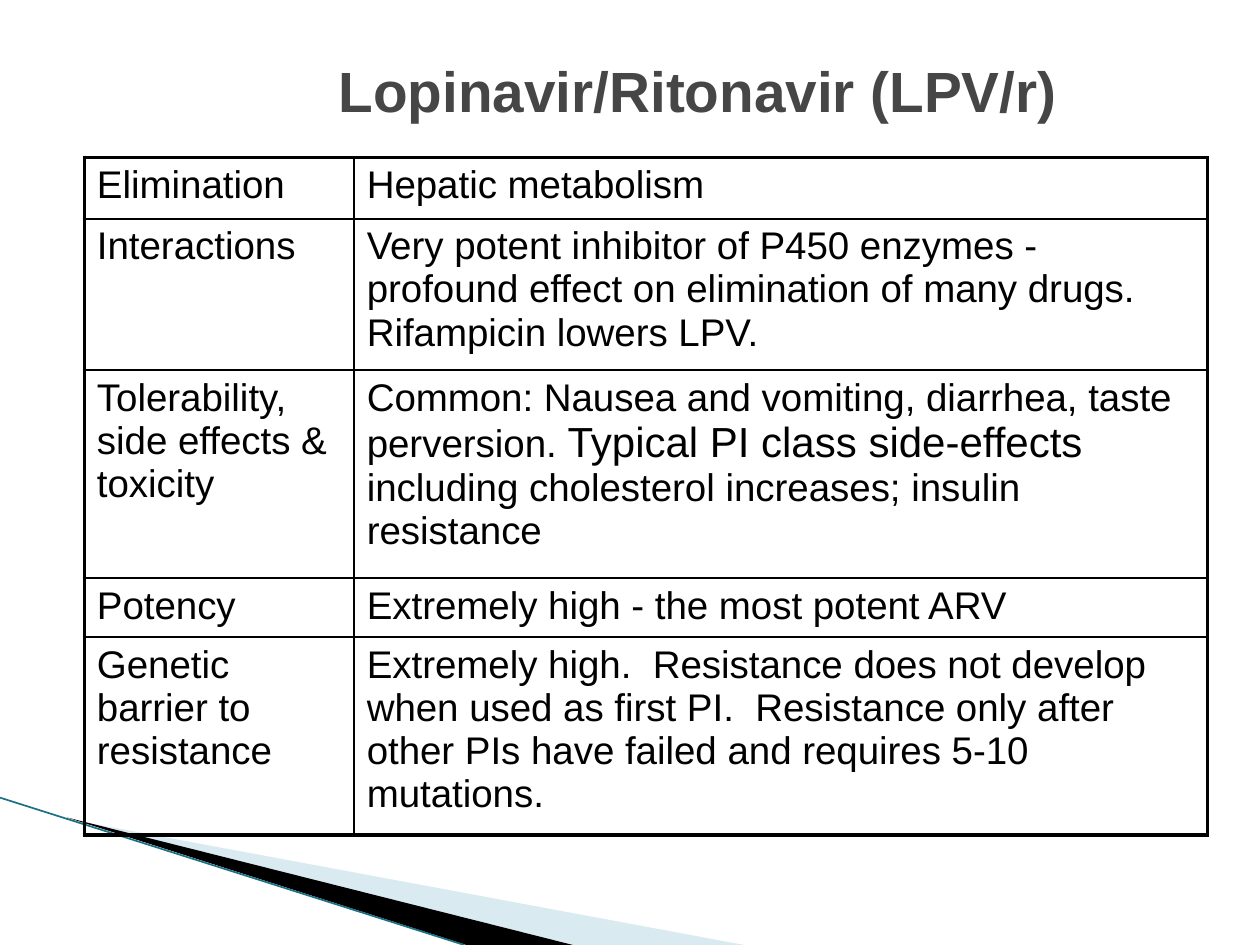
from dataclasses import dataclass

import lxml.etree
import pptx
import pptx.dml.color
import pptx.enum.shapes
import pptx.enum.text
import pptx.oxml.ns
import pptx.util
from pptx.util import Cm


@dataclass(frozen=True)
class Theme:
    font: str = "Arial"
    title: str = "464646"
    ink: str = "000000"
    pale_wedge: str = "A0CBDC"
    edge: str = "1A7085"
    title_size: float = 32.4
    body_size: float = 22
    large_size: float = 24
    inner_line: float = 1
    outer_line: float = 2.25
    edge_line: float = 0.95


theme = Theme()
qn = pptx.oxml.ns.qn


def rgb(value):
    return pptx.dml.color.RGBColor.from_string(value)


def set_border(cell, side, width):
    """Draw one side (L, R, T or B) of a cell, width in points."""
    line = lxml.etree.SubElement(cell._tc.get_or_add_tcPr(), qn(f"a:ln{side}"),
                                 w=str(pptx.util.Pt(width)))
    fill = lxml.etree.SubElement(line, qn("a:solidFill"))
    lxml.etree.SubElement(fill, qn("a:srgbClr"), val=theme.ink)


deck = pptx.Presentation()
deck.slide_width, deck.slide_height = Cm(25.4), Cm(19.05)
slide = deck.slides.add_slide(deck.slide_layouts[5])

# Title
title = slide.shapes.title
title.left, title.top, title.width, title.height = Cm(2.74), Cm(1.27), Cm(22.66), Cm(1.07)
title.text_frame.text = "Lopinavir/Ritonavir (LPV/r)"
title.text_frame.vertical_anchor = pptx.enum.text.MSO_ANCHOR.MIDDLE
heading = title.text_frame.paragraphs[0]
heading.alignment = pptx.enum.text.PP_ALIGN.CENTER
heading_font = heading.runs[0].font
heading_font.name = theme.font
heading_font.size = pptx.util.Pt(theme.title_size)
heading_font.bold = True
heading_font.color.rgb = rgb(theme.title)

# Corner wedges: outline in cm, colour, opacity in percent
wedges = [
    ([(1.4, 16.52), (15, 19.05), (11.58, 19.05)], theme.pale_wedge, 40),
    ([(1.35, 16.48), (11.55, 19.05), (9.4, 19.05)], theme.ink, 100),
]
for outline, color, opacity in wedges:
    points = [(Cm(x), Cm(y)) for x, y in outline]
    builder = slide.shapes.build_freeform(*points[0])
    builder.add_line_segments(points[1:], close=True)
    wedge = builder.convert_to_shape()
    wedge.shadow.inherit = False
    wedge.line.fill.background()
    wedge.fill.solid()
    wedge.fill.fore_color.rgb = rgb(color)
    if opacity < 100:
        tint = wedge._element.spPr.find(".//" + qn("a:srgbClr"))
        lxml.etree.SubElement(tint, qn("a:alpha"), val=str(opacity * 1000))

edge = slide.shapes.add_connector(pptx.enum.shapes.MSO_CONNECTOR.STRAIGHT,
                                  Cm(0), Cm(16.08), Cm(9.36), Cm(19.05))
edge.line.color.rgb = rgb(theme.edge)
edge.line.width = pptx.util.Pt(theme.edge_line)
lxml.etree.SubElement(edge._element.spPr, qn("a:effectLst"))

# Drug profile: row height in cm, property, runs of the description
normal, large = theme.body_size, theme.large_size
profile = [
    (1.24, "Elimination", [("Hepatic metabolism", normal)]),
    (3.05, "Interactions", [
        ("Very potent inhibitor of P450 enzymes - profound effect on elimination "
         "of many drugs. Rifampicin lowers LPV.", normal)]),
    (4.19, "Tolerability, side effects & toxicity", [
        ("Common: Nausea and vomiting, diarrhea, taste perversion. ", normal),
        ("Typical PI class side-effects", large),
        (" including cholesterol increases; insulin resistance", normal)]),
    (1.19, "Potency", [("Extremely high - the most potent ARV", normal)]),
    (3.99, "Genetic barrier to resistance", [
        ("Extremely high.  Resistance does not develop when used as first PI.  "
         "Resistance only after other PIs have failed and requires 5-10 mutations.",
         normal)]),
]
column_widths = [5.44, 17.2]
last_row, last_column = len(profile) - 1, len(column_widths) - 1
table = slide.shapes.add_table(
    len(profile), len(column_widths), Cm(1.7), Cm(3.17),
    Cm(sum(column_widths)), Cm(sum(height for height, _, _ in profile))).table
table.first_row = table.horz_banding = False
for column, width in zip(table.columns, column_widths):
    column.width = Cm(width)

for r, (height, label, description) in enumerate(profile):
    table.rows[r].height = Cm(height)
    for c, content in enumerate([[(label, normal)], description]):
        cell = table.cell(r, c)
        outer_sides = {"L": c == 0, "R": c == last_column, "T": r == 0, "B": r == last_row}
        for side, is_outer in outer_sides.items():
            set_border(cell, side, theme.outer_line if is_outer else theme.inner_line)
        cell.fill.background()
        for words, size in content:
            run = cell.text_frame.paragraphs[0].add_run()
            run.text = words
            run.font.name = theme.font
            run.font.size = pptx.util.Pt(size)
            run.font.color.rgb = rgb(theme.ink)

deck.save("out.pptx")
